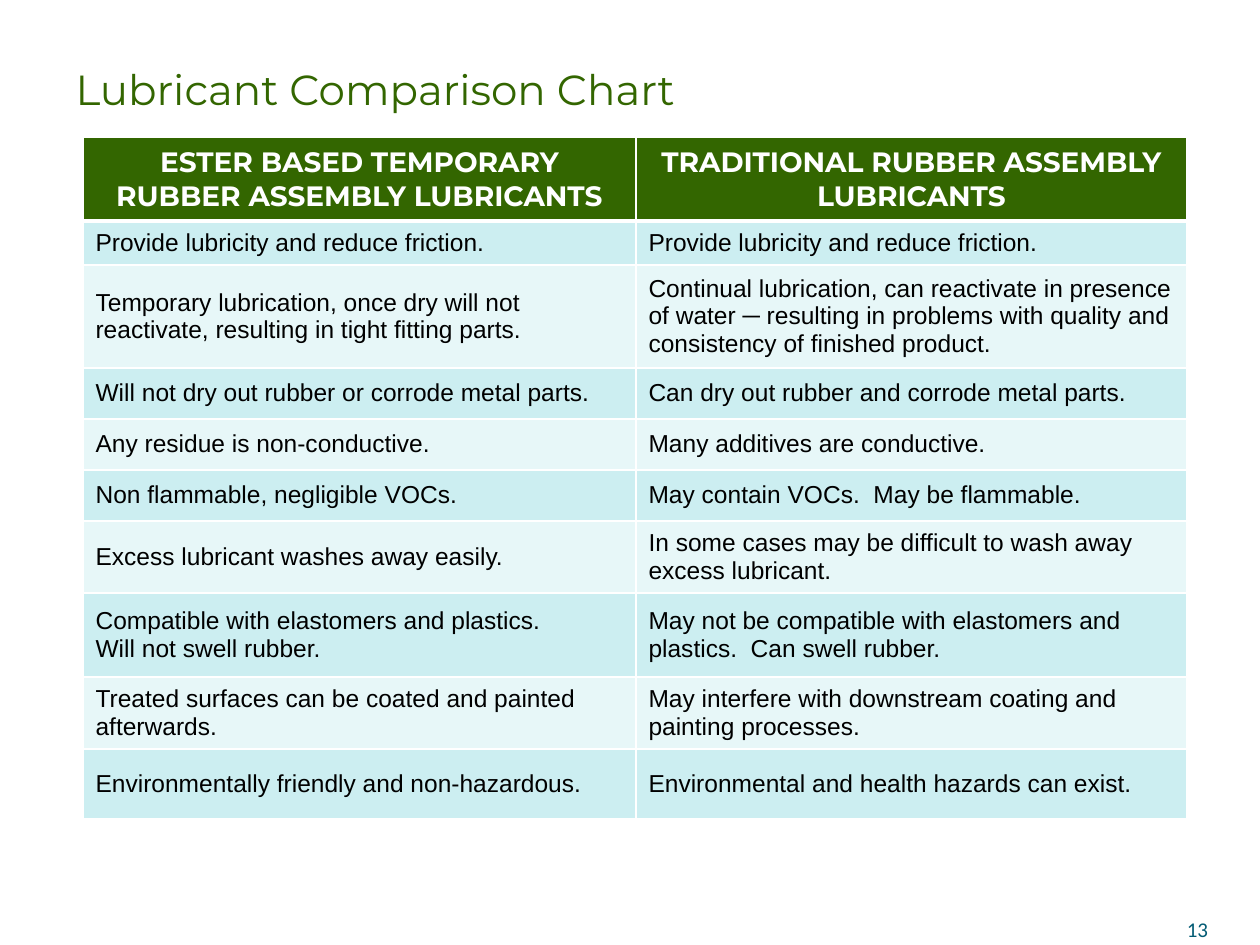
from lxml.etree import SubElement
from pptx import Presentation
from pptx.dml.color import RGBColor
from pptx.enum.text import MSO_ANCHOR as Anchor, PP_ALIGN as Align
from pptx.oxml.ns import qn
from pptx.util import Emu, Pt

COLORS = {
    "green": "336600",
    "white": "FFFFFF",
    "black": "000000",
    "band_dark": "CCEEF1",
    "band_light": "E7F7F8",
    "number": "045C75",
}
HEADER = ("ESTER BASED TEMPORARY\vRUBBER ASSEMBLY LUBRICANTS",
          "TRADITIONAL RUBBER ASSEMBLY LUBRICANTS")
# Row height in px, ester based text, traditional text
COMPARISON = [
    (44, "Provide lubricity and reduce friction.",
     "Provide lubricity and reduce friction."),
    (103, "Temporary lubrication, once dry will not reactivate, resulting in tight fitting parts.",
     "Continual lubrication, can reactivate in presence of water ─ resulting in problems "
     "with quality and consistency of finished product."),
    (51, "Will not dry out rubber or corrode metal parts.",
     "Can dry out rubber and corrode metal parts."),
    (51, "Any residue is non-conductive.", "Many additives are conductive."),
    (51, "Non flammable, negligible VOCs.", "May contain VOCs.  May be flammable."),
    (72, "Excess lubricant washes away easily.",
     "In some cases may be difficult to wash away excess lubricant."),
    (84, "Compatible with elastomers and plastics.\vWill not swell rubber.",
     "May not be compatible with elastomers and plastics.  Can swell rubber."),
    (72, "Treated surfaces can be coated and painted afterwards.",
     "May interfere with downstream coating and painting processes."),
    (70, "Environmentally friendly and non-hazardous.",
     "Environmental and health hazards can exist."),
]


def px(length):
    return Emu(round(length * 914400 / 126))


def style(para, face, size, color, align=Align.LEFT, bold=False):
    para.alignment = align
    para.font.name = face
    para.font.size = Pt(size)
    para.font.bold = bold
    para.font.color.rgb = RGBColor.from_string(COLORS[color])


deck = Presentation()
deck.slide_width, deck.slide_height = px(1260), px(945)
page = deck.slides.add_slide(deck.slide_layouts[5])

# Title
title = page.shapes.title
title.left, title.top, title.width, title.height = px(63), px(63), px(926), px(84)
title.text_frame.text = "Lubricant Comparison Chart"
title.text_frame.vertical_anchor = Anchor.TOP
heading = title.text_frame.paragraphs[0]
heading.line_spacing = 0.9
style(heading, "Montserrat", 24, "green")

# Comparison table
rows = [(84, *HEADER)] + COMPARISON
widths = (553, 551)
table = page.shapes.add_table(len(rows), 2, px(83), px(137), px(sum(widths)),
                              px(sum(row[0] for row in rows))).table
for column, width in zip(table.columns, widths):
    column.width = px(width)

for index, (height, *texts) in enumerate(rows):
    table.rows[index].height = px(height)
    is_header = index == 0
    band = "green" if is_header else "band_dark" if index % 2 else "band_light"
    for cell, text in zip(table.rows[index].cells, texts):
        cell.text = text
        cell.vertical_anchor = Anchor.MIDDLE
        para = cell.text_frame.paragraphs[0]
        if is_header:
            style(para, "Montserrat", 16, "white", Align.CENTER, True)
        else:
            style(para, "Arial", 14, "black")

        # White borders, heavier below the header
        properties = cell._tc.get_or_add_tcPr()
        for side in "LRTB":
            points = 3 if is_header and side == "B" else 1
            line = SubElement(properties, qn(f"a:ln{side}"), w=str(Pt(points)))
            fill = SubElement(line, qn("a:solidFill"))
            SubElement(fill, qn("a:srgbClr"), val=COLORS["white"])
        cell.fill.solid()
        cell.fill.fore_color.rgb = RGBColor.from_string(COLORS[band])

# Page number
number_box = page.shapes.add_textbox(px(1103), px(892), px(105), px(50))
frame = number_box.text_frame
frame.word_wrap = True
frame.margin_left = frame.margin_top = frame.margin_right = frame.margin_bottom = 0
frame.vertical_anchor = Anchor.BOTTOM
frame.text = "13"
style(frame.paragraphs[0], "Calibri", 12, "number", Align.RIGHT)

deck.save("out.pptx")
